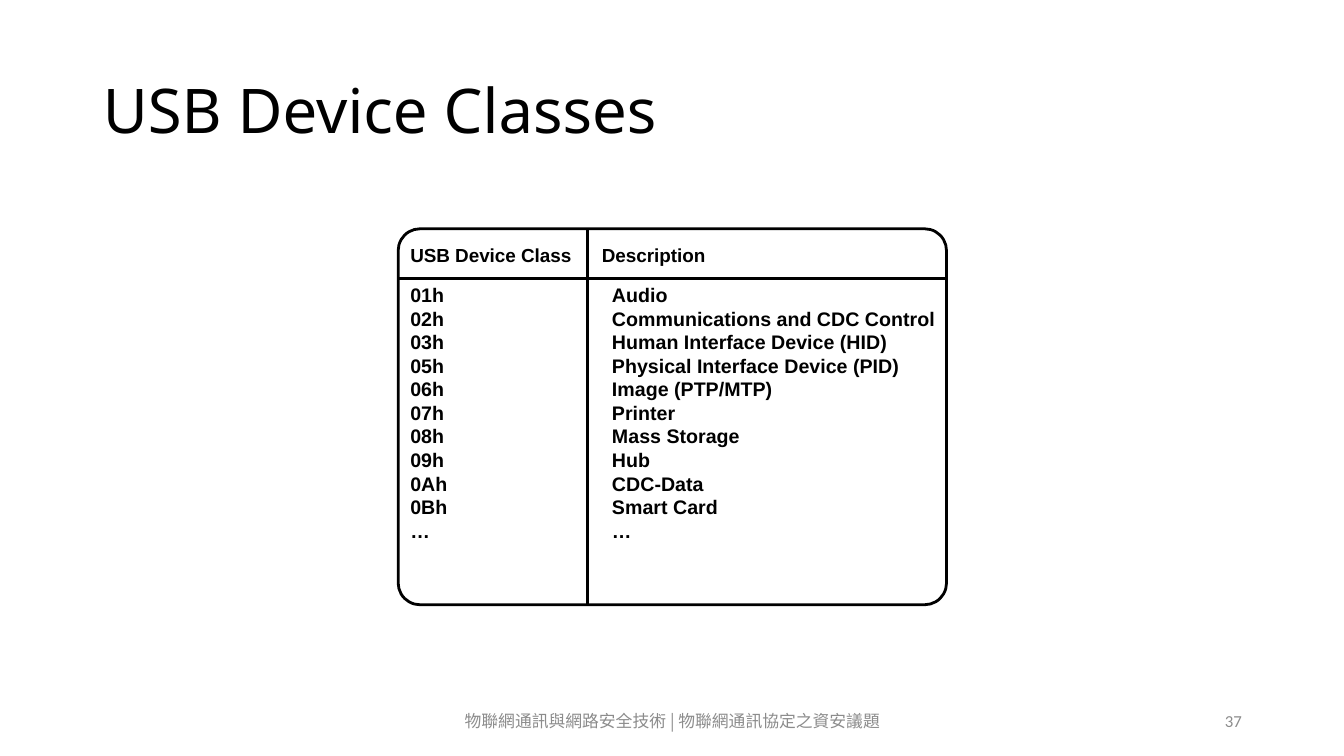
from dataclasses import dataclass
from lxml.etree import SubElement
from pptx import Presentation
from pptx.dml.color import RGBColor as RGB
from pptx.enum.shapes import MSO_CONNECTOR as CONN, MSO_SHAPE as SHAPE
from pptx.enum.text import MSO_ANCHOR as ANCHOR, PP_ALIGN as ALIGN
from pptx.oxml.ns import qn
from pptx.util import Inches, Pt


@dataclass
class Theme:
    ink: RGB = RGB(0, 0, 0)
    muted: RGB = RGB(0x8C, 0x8C, 0x8C)
    title: float = 44
    head: float = 13.5
    body: float = 14
    foot: float = 12
    rule: float = 2


theme = Theme()
prs = Presentation()
prs.slide_width, prs.slide_height = Inches(13.33), Inches(7.5)
s = prs.slides.add_slide(prs.slide_layouts[5])


def share(x, y, w, h):
    cx, cy = prs.slide_width / 100, prs.slide_height / 100
    return int(x * cx), int(y * cy), int(w * cx), int(h * cy)


def write(p, text, font, size, color, bold=False, tab=None):
    if tab:
        tabs = SubElement(p._p.get_or_add_pPr(), qn("a:tabLst"))
        SubElement(tabs, qn("a:tab"), pos=str(Inches(tab)), algn="l")
    r = p.add_run()
    r.text = text
    r.font.name, r.font.size, r.font.bold = font, Pt(size), bold
    r.font.color.rgb = color
    SubElement(r._r.get_or_add_rPr(), qn("a:ea"), typeface=font)


title = s.shapes.title
title.left, title.top, title.width, title.height = share(6.9, 5.33, 86.25, 19.33)
tf = title.text_frame
tf.vertical_anchor = ANCHOR.MIDDLE
p = tf.paragraphs[0]
p.alignment, p.line_spacing = ALIGN.LEFT, 0.9
write(p, "USB Device Classes", "Noto Sans", theme.title, theme.ink)

left, top, width, height = 29.63, 30.27, 40.8, 49.73
divider, header_end = 43.73, 36.8

frame = s.shapes.add_shape(SHAPE.ROUNDED_RECTANGLE, *share(left, top, width, height))
frame.adjustments[0] = 0.058
frame.shadow.inherit = False
frame.fill.background()
frame.line.color.rgb = theme.ink
frame.line.width = Pt(theme.rule)

classes = [
    ("01h", "Audio"),
    ("02h", "Communications and CDC Control"),
    ("03h", "Human Interface Device (HID)"),
    ("05h", "Physical Interface Device (PID)"),
    ("06h", "Image (PTP/MTP)"),
    ("07h", "Printer"),
    ("08h", "Mass Storage"),
    ("09h", "Hub"),
    ("0Ah", "CDC-Data"),
    ("0Bh", "Smart Card"),
    ("…", "…"),
]
blocks = [
    ((30.23, 29.47, 29.55, 8.53), ANCHOR.MIDDLE, theme.head, 1.9,
     [("USB Device Class", "Description")]),
    ((30.23, 36.93, 40.2, 44.67), ANCHOR.TOP, theme.body, 2, classes),
]
for place, anchor, size, tab, rows in blocks:
    tf = s.shapes.add_textbox(*share(*place)).text_frame
    tf.word_wrap = True
    tf.vertical_anchor = anchor
    tf.margin_left = tf.margin_right = tf.margin_top = tf.margin_bottom = Inches(0.04)
    for i, row in enumerate(rows):
        p = tf.add_paragraph() if i else tf.paragraphs[0]
        p.line_spacing = Pt(size * 1.2)
        write(p, "\t".join(row), "Arial", size, theme.ink, True, tab)

for x, y, w, h in [(divider, top, 0, height), (left, header_end, width, 0)]:
    x1, y1, dx, dy = share(x, y, w, h)
    line = s.shapes.add_connector(CONN.STRAIGHT, x1, y1, x1 + dx, y1 + dy)
    line.line.color.rgb = theme.ink
    line.line.width = Pt(theme.rule)
    SubElement(line._element.spPr, qn("a:effectLst"))

footers = [
    (33.15, 33.75, ALIGN.CENTER, "Noto Sans CJK TC", "物聯網通訊與網路安全技術 | 物聯網通訊協定之資安議題"),
    (70.65, 22.5, ALIGN.RIGHT, "Calibri", "37"),
]
for x, w, align, font, text in footers:
    tf = s.shapes.add_textbox(*share(x, 92.67, w, 5.33)).text_frame
    tf.word_wrap = True
    tf.vertical_anchor = ANCHOR.MIDDLE
    p = tf.paragraphs[0]
    p.alignment = align
    write(p, text, font, theme.foot, theme.muted)

prs.save("out.pptx")
